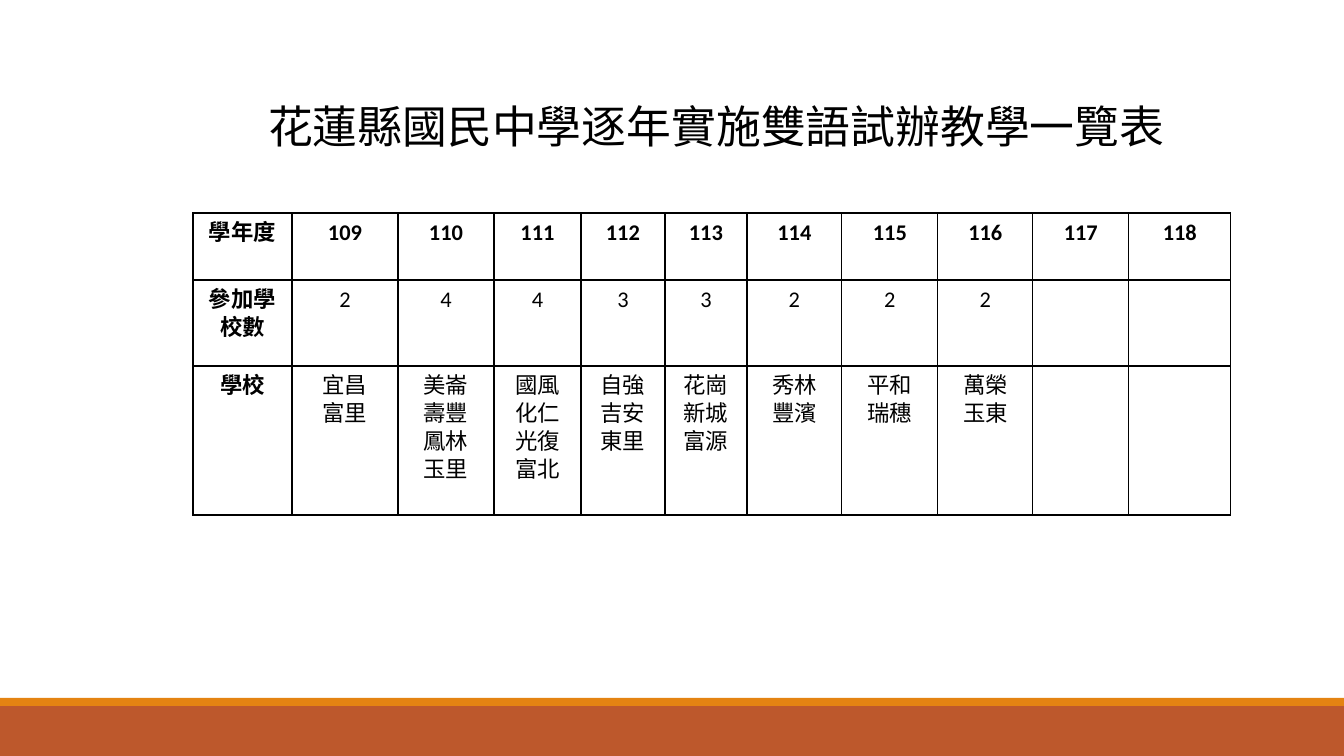
import pptx
import pptx.util
import pptx.dml.color
import pptx.enum.shapes
import pptx.enum.text
import pptx.oxml.ns
import lxml.etree

RGB = pptx.dml.color.RGBColor
BLACK = RGB(0x00, 0x00, 0x00)
RUST = RGB(0xBD, 0x58, 0x2C)
AMBER = RGB(0xE4, 0x83, 0x12)
FONT = "Calibri"
EMU = 914400 / 100.8
WIDE, HIGH = 1344, 756

COLS = [99, 106, 96, 87, 84, 82, 95, 96, 95, 96, 102]
ROWS = [67, 86, 149]
YEARS = [str(year) for year in range(109, 119)]
SCHOOLS = [
    ["宜昌", "富里"],
    ["美崙", "壽豐", "鳳林", "玉里"],
    ["國風", "化仁", "光復", "富北"],
    ["自強", "吉安", "東里"],
    ["花崗", "新城", "富源"],
    ["秀林", "豐濱"],
    ["平和", "瑞穗"],
    ["萬榮", "玉東"],
    [],
    [],
]
GRID = [
    [["學年度"]] + [[year] for year in YEARS],
    [["參加學校數"]] + [[str(len(names))] if names else [] for names in SCHOOLS],
    [["學校"]] + SCHOOLS,
]


def px(num):
    return pptx.util.Emu(round(num * EMU))


class Page:
    def __init__(self, deck):
        self.slide = deck.slides.add_slide(deck.slide_layouts[5])
        self.shapes = self.slide.shapes

    def words(self, para, text, size, bold=False):
        run = para.add_run()
        run.text = text
        run.font.name = FONT
        run.font.size = pptx.util.Pt(size)
        run.font.bold = bold
        run.font.color.rgb = BLACK

    def bar(self, top, high, color):
        kind = pptx.enum.shapes.MSO_SHAPE.RECTANGLE
        bar = self.shapes.add_shape(kind, 0, px(top), px(WIDE), px(high))
        bar.shadow.inherit = False
        bar.fill.solid()
        bar.fill.fore_color.rgb = color
        bar.line.fill.background()

    def title(self, text, left, top, wide, high):
        head = self.shapes.title
        head.left, head.top = px(left), px(top)
        head.width, head.height = px(wide), px(high)
        frame = head.text_frame
        frame.word_wrap = False
        frame.auto_size = pptx.enum.text.MSO_AUTO_SIZE.NONE
        frame.vertical_anchor = pptx.enum.text.MSO_ANCHOR.TOP
        para = frame.paragraphs[0]
        para.alignment = pptx.enum.text.PP_ALIGN.LEFT
        self.words(para, text, 32)

    def edge(self, cell):
        props = cell._tc.get_or_add_tcPr()
        name = pptx.oxml.ns.qn
        for spot, side in enumerate(("a:lnL", "a:lnR", "a:lnT", "a:lnB")):
            line = lxml.etree.Element(name(side), w=str(int(pptx.util.Pt(1))))
            fill = lxml.etree.SubElement(line, name("a:solidFill"))
            lxml.etree.SubElement(fill, name("a:srgbClr"), val=str(BLACK))
            props.insert(spot, line)

    def fill(self, cell, lines, bold):
        cell.fill.background()
        self.edge(cell)
        cell.margin_left = cell.margin_right = px(6)
        cell.margin_top = cell.margin_bottom = px(6)
        frame = cell.text_frame
        for spot, text in enumerate(lines):
            para = frame.add_paragraph() if spot else frame.paragraphs[0]
            para.alignment = pptx.enum.text.PP_ALIGN.CENTER
            para.line_spacing = pptx.util.Pt(20)
            self.words(para, text, 16, bold)

    def table(self, left, top, cols, rows, grid):
        table = self.shapes.add_table(
            len(rows), len(cols), px(left), px(top), px(sum(cols)), px(sum(rows))
        ).table
        table.first_row = table.horz_banding = False
        for col, wide in zip(table.columns, cols):
            col.width = px(wide)
        for row, high in zip(table.rows, rows):
            row.height = px(high)
        for down, line in enumerate(grid):
            for across, lines in enumerate(line):
                bold = down == 0 or across == 0
                self.fill(table.cell(down, across), lines, bold)


def main():
    deck = pptx.Presentation()
    deck.slide_width, deck.slide_height = px(WIDE), px(HIGH)
    page = Page(deck)
    page.bar(706, 50, RUST)
    page.bar(698, 8, AMBER)
    page.table(193, 213, COLS, ROWS, GRID)
    page.title("花蓮縣國民中學逐年實施雙語試辦教學一覽表", 258, 94, 925, 65)
    deck.save("out.pptx")


if __name__ == "__main__":
    main()
